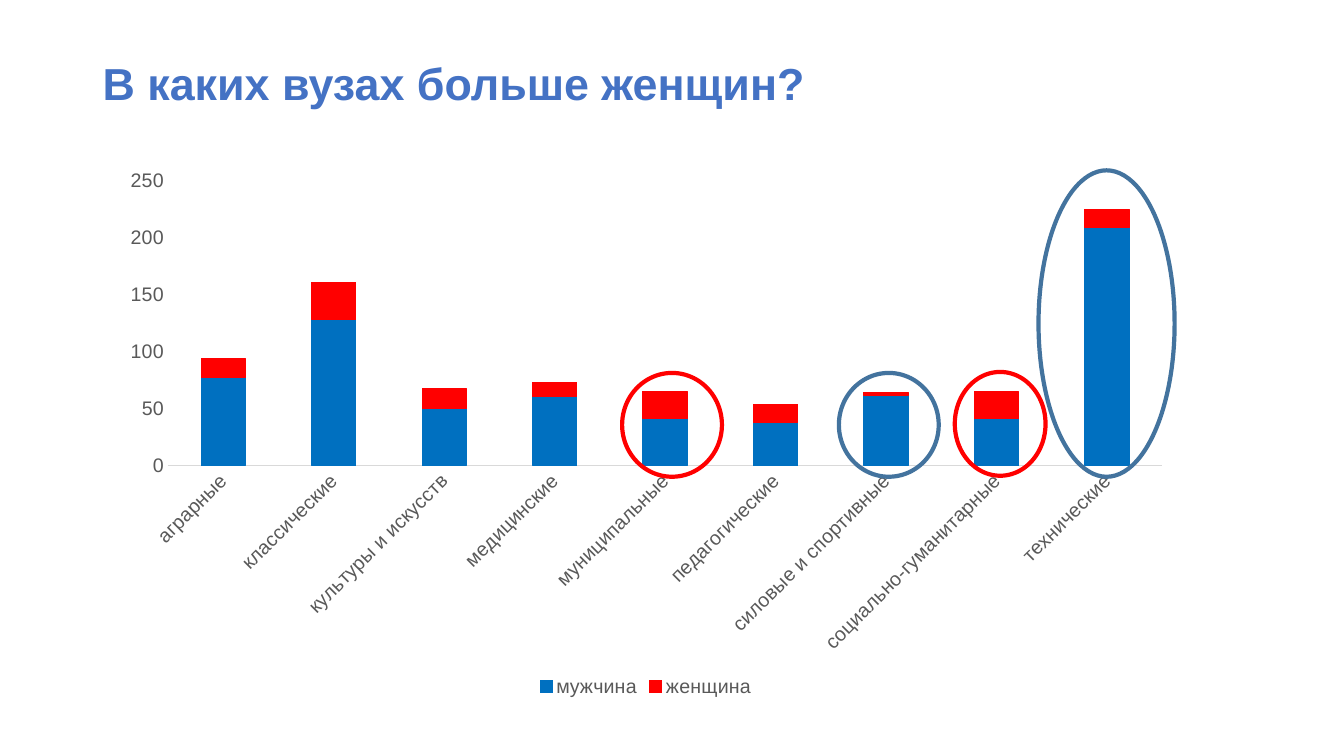
from lxml import etree
from pptx import Presentation
from pptx.chart.data import CategoryChartData
from pptx.dml.color import RGBColor
from pptx.enum.chart import XL_CHART_TYPE as ChartType
from pptx.enum.chart import XL_LEGEND_POSITION as LegendPosition
from pptx.enum.chart import XL_TICK_MARK as TickMark
from pptx.enum.shapes import MSO_SHAPE as Preset
from pptx.enum.text import MSO_ANCHOR as Anchor
from pptx.oxml import parse_xml
from pptx.oxml.ns import nsdecls, qn
from pptx.util import Inches, Pt

FONT = "Arial"
TITLE_BLUE = RGBColor(0x44, 0x72, 0xC4)
MEN_BLUE = RGBColor(0x00, 0x70, 0xC0)
WOMEN_RED = RGBColor(0xFF, 0x00, 0x00)
RING_BLUE = RGBColor(0x43, 0x73, 0x9E)
TEXT_GREY = RGBColor(0x59, 0x59, 0x59)
AXIS_GREY = RGBColor(0xD9, 0xD9, 0xD9)

UNIVERSITIES = [
    "аграрные", "классические", "культуры и искусств", "медицинские",
    "муниципальные", "педагогические", "силовые и спортивные",
    "социально-гуманитарные", "технические",
]
SERIES = [
    ("мужчина", [77, 128, 50, 61, 41, 38, 62, 41, 209], MEN_BLUE),
    ("женщина", [17, 33, 18, 12, 24, 16, 2, 24, 16], WOMEN_RED),
]
CHART_BOX = (1.08, 1.58, 10.65, 5.38)
# Offsets from the chart's corner, then width and height
RINGS = [
    (9.22, 0.11, 1.35, 3.04, RING_BLUE),
    (7.24, 2.12, 0.99, 1.03, RING_BLUE),
    (5.09, 2.12, 0.99, 1.03, WOMEN_RED),
    (8.39, 2.11, 0.90, 1.03, WOMEN_RED),
]


def add_title(page, left, top, width, height):
    box = page.shapes.add_textbox(*map(Inches, (left, top, width, height)))
    frame = box.text_frame
    frame.word_wrap = True
    frame.vertical_anchor = Anchor.MIDDLE
    para = frame.paragraphs[0]
    para.line_spacing = 0.9
    span = para.add_run()
    span.text = "В каких вузах больше женщин?"
    span.font.name = FONT
    span.font.size = Pt(32)
    span.font.bold = True
    span.font.color.rgb = TITLE_BLUE


def style_font(font):
    font.name = FONT
    font.size = Pt(14)
    font.color.rgb = TEXT_GREY


def style_axes(chart):
    for axis in (chart.category_axis, chart.value_axis):
        axis.has_major_gridlines = False
        axis.major_tick_mark = axis.minor_tick_mark = TickMark.NONE
        style_font(axis.tick_labels.font)
    category_line = chart.category_axis.format.line
    category_line.color.rgb = AXIS_GREY
    category_line.width = Pt(0.75)
    chart.value_axis.format.line.fill.background()
    chart.value_axis.minimum_scale = 0
    chart.value_axis.maximum_scale = 250
    chart.value_axis.major_unit = 50
    # Slant the category labels by 45 degrees
    label_body = chart.category_axis._element.find(qn("c:txPr")).find(qn("a:bodyPr"))
    label_body.set("rot", "-2700000")
    label_body.set("vert", "horz")


def place_plot(chart, x, y, w, h):
    """Fix the inner plot area, in fractions of the chart box."""
    plot_area = chart._chartSpace.chart.plotArea
    for old in plot_area.findall(qn("c:layout")):
        plot_area.remove(old)
    layout = parse_xml(f"<c:layout {nsdecls('c')}><c:manualLayout/></c:layout>")
    settings = [("layoutTarget", "inner"), ("xMode", "edge"), ("yMode", "edge"),
                ("x", x), ("y", y), ("w", w), ("h", h)]
    for name, value in settings:
        etree.SubElement(layout[0], qn(f"c:{name}")).set("val", str(value))
    plot_area.insert(0, layout)


def add_university_chart(page, left, top, width, height):
    data = CategoryChartData()
    data.categories = UNIVERSITIES
    for name, values, _ in SERIES:
        data.add_series(name, values)
    chart = page.shapes.add_chart(
        ChartType.COLUMN_STACKED, *map(Inches, (left, top, width, height)), data
    ).chart
    style_font(chart.font)
    chart.has_title = False
    chart.has_legend = True
    chart.legend.position = LegendPosition.BOTTOM
    chart.legend.include_in_layout = False
    style_font(chart.legend.font)
    style_axes(chart)
    place_plot(chart, 0.055, 0.04, 0.926, 0.525)

    plot = chart.plots[0]
    plot.gap_width = 150
    plot.overlap = 100
    plot.vary_by_categories = False
    for series, (_, _, color) in zip(plot.series, SERIES):
        series.format.fill.solid()
        series.format.fill.fore_color.rgb = color
        series.format.line.color.rgb = color
        series.format.line.width = Pt(0.75)


def add_rings(page, left, top):
    """Circle the notable columns of the chart whose corner is given."""
    for dx, dy, width, height, color in RINGS:
        ring = page.shapes.add_shape(
            Preset.OVAL, *map(Inches, (left + dx, top + dy, width, height)))
        ring.shadow.inherit = False
        ring.fill.background()
        ring.line.color.rgb = color
        ring.line.width = Pt(3)


def main():
    deck = Presentation()
    deck.slide_width = Inches(13.33)
    deck.slide_height = Inches(7.5)
    page = deck.slides.add_slide(deck.slide_layouts[6])
    add_title(page, 0.92, 0.13, 11.5, 1.45)
    add_university_chart(page, *CHART_BOX)
    add_rings(page, *CHART_BOX[:2])
    deck.save("out.pptx")


if __name__ == "__main__":
    main()
